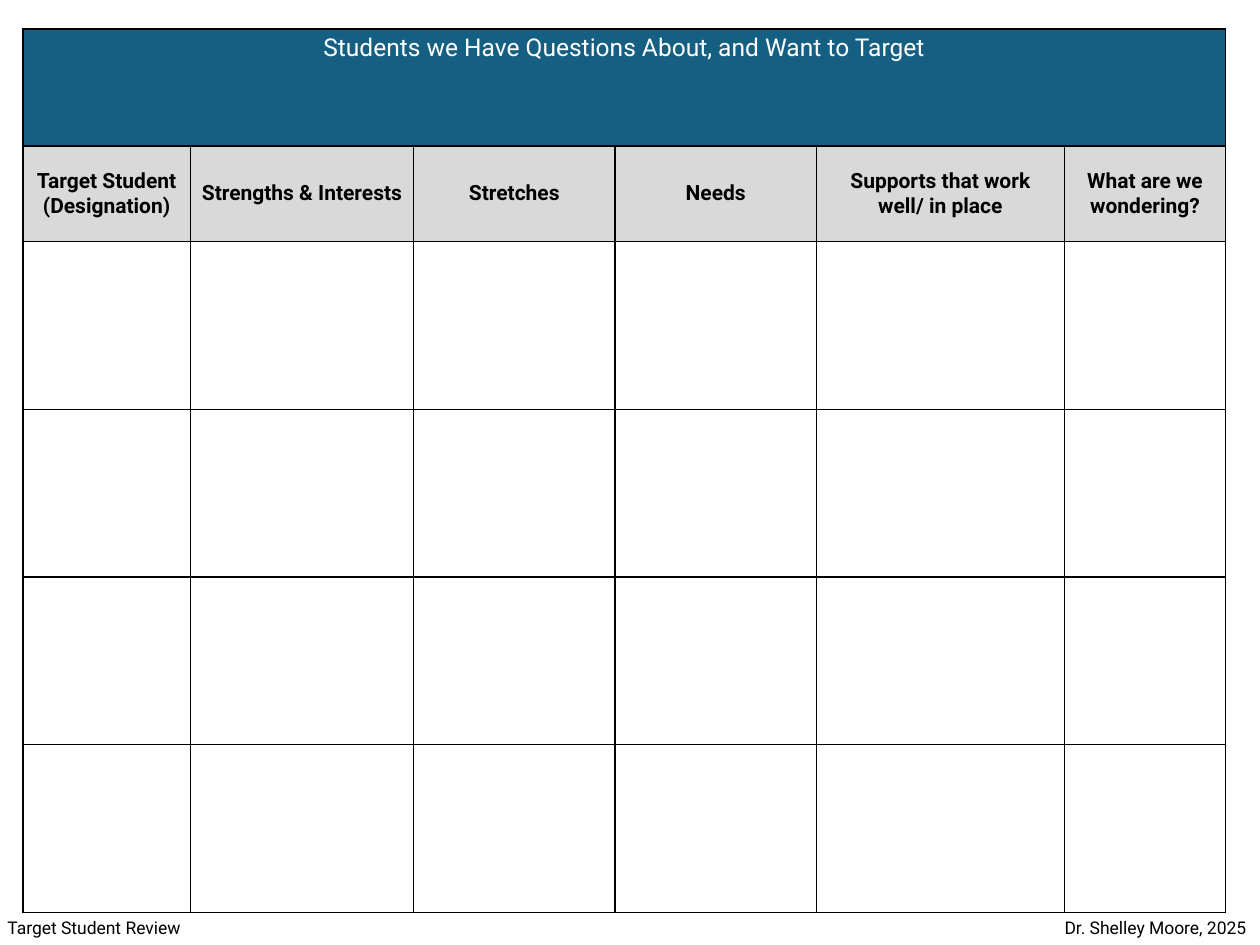
from lxml import etree
from pptx import Presentation
from pptx.dml.color import RGBColor
from pptx.enum.text import MSO_ANCHOR, MSO_AUTO_SIZE, PP_ALIGN
from pptx.oxml.ns import qn
from pptx.util import Cm, Pt

CENTER = PP_ALIGN.CENTER
LEFT = PP_ALIGN.LEFT
MIDDLE = MSO_ANCHOR.MIDDLE
TOP = MSO_ANCHOR.TOP
GROW = MSO_AUTO_SIZE.SHAPE_TO_FIT_TEXT

FONT = "Roboto"
BLACK, WHITE, BLUE, GREY = "000000", "FFFFFF", "156082", "D9D9D9"

BANNER = "Students we Have Questions About, and Want to Target"
# Heading paragraphs and width in cm of each column
COLUMNS = [
    (["Target Student", "(Designation)"], 3.38),
    (["Strengths & Interests"], 4.5),
    (["Stretches"], 4.06),
    (["Needs"], 4.06),
    (["Supports that work well/ in place"], 5.0),
    (["What are we wondering?"], 3.25),
]
STUDENT_ROWS = 4
BANNER_HEIGHT, HEADING_HEIGHT, STUDENT_HEIGHT = 2.36, 1.93, 3.38


def color(hex_string):
    return RGBColor.from_string(hex_string)


def write(frame, lines, size, ink, bold=False, align=LEFT):
    for index, line in enumerate(lines):
        paragraph = frame.add_paragraph() if index else frame.paragraphs[0]
        paragraph.alignment = align
        run = paragraph.add_run()
        run.text = line
        run.font.name = FONT
        run.font.size = Pt(size)
        run.font.bold = bold
        run.font.color.rgb = color(ink)


def style_cell(cell, fill, anchor=TOP):
    # Borders come before the fill in the cell properties
    properties = cell._tc.get_or_add_tcPr()
    for side in ("a:lnL", "a:lnR", "a:lnT", "a:lnB"):
        border = etree.SubElement(properties, qn(side), w=str(Pt(1)))
        solid = etree.SubElement(border, qn("a:solidFill"))
        etree.SubElement(solid, qn("a:srgbClr"), val=BLACK)
    cell.fill.solid()
    cell.fill.fore_color.rgb = color(fill)
    cell.vertical_anchor = anchor
    cell.margin_left = cell.margin_right = Cm(0.18)
    cell.margin_top = cell.margin_bottom = Cm(0.1)


def add_review_table(slide, left, top):
    heights = [BANNER_HEIGHT, HEADING_HEIGHT] + [STUDENT_HEIGHT] * STUDENT_ROWS
    widths = [width for _, width in COLUMNS]
    table = slide.shapes.add_table(
        len(heights), len(widths), Cm(left), Cm(top),
        Cm(sum(widths)), Cm(sum(heights))).table
    table.first_row = table.horz_banding = False
    for column, width in zip(table.columns, widths):
        column.width = Cm(width)
    for row, height in zip(table.rows, heights):
        row.height = Cm(height)

    # Fills and borders: banner, headings, then the student rows
    fills = [BLUE, GREY] + [WHITE] * STUDENT_ROWS
    anchors = [TOP, MIDDLE] + [TOP] * STUDENT_ROWS
    for row, fill, anchor in zip(table.rows, fills, anchors):
        for cell in row.cells:
            style_cell(cell, fill, anchor)

    # Banner across all columns
    banner = table.cell(0, 0)
    banner.merge(table.cell(0, len(widths) - 1))
    write(banner.text_frame, [BANNER], 14, WHITE, align=CENTER)

    # Column headings
    for index, (heading, _) in enumerate(COLUMNS):
        write(table.cell(1, index).text_frame, heading, 12, BLACK, True, CENTER)


def add_footer(slide, text, left, top, width=5.18, height=0.69):
    frame = slide.shapes.add_textbox(
        Cm(left), Cm(top), Cm(width), Cm(height)).text_frame
    frame.word_wrap = True
    frame.auto_size = GROW
    write(frame, [text], 10, BLACK)


def main():
    presentation = Presentation()
    presentation.slide_width, presentation.slide_height = Cm(25.4), Cm(19.05)
    blank_layout = presentation.slide_layouts[6]
    slide = presentation.slides.add_slide(blank_layout)
    add_review_table(slide, 0.46, 0.58)
    add_footer(slide, "Target Student Review", -0.1, 18.36)
    add_footer(slide, "Dr. Shelley Moore, 2025", 21.21, 18.36)
    presentation.save("out.pptx")


if __name__ == "__main__":
    main()
